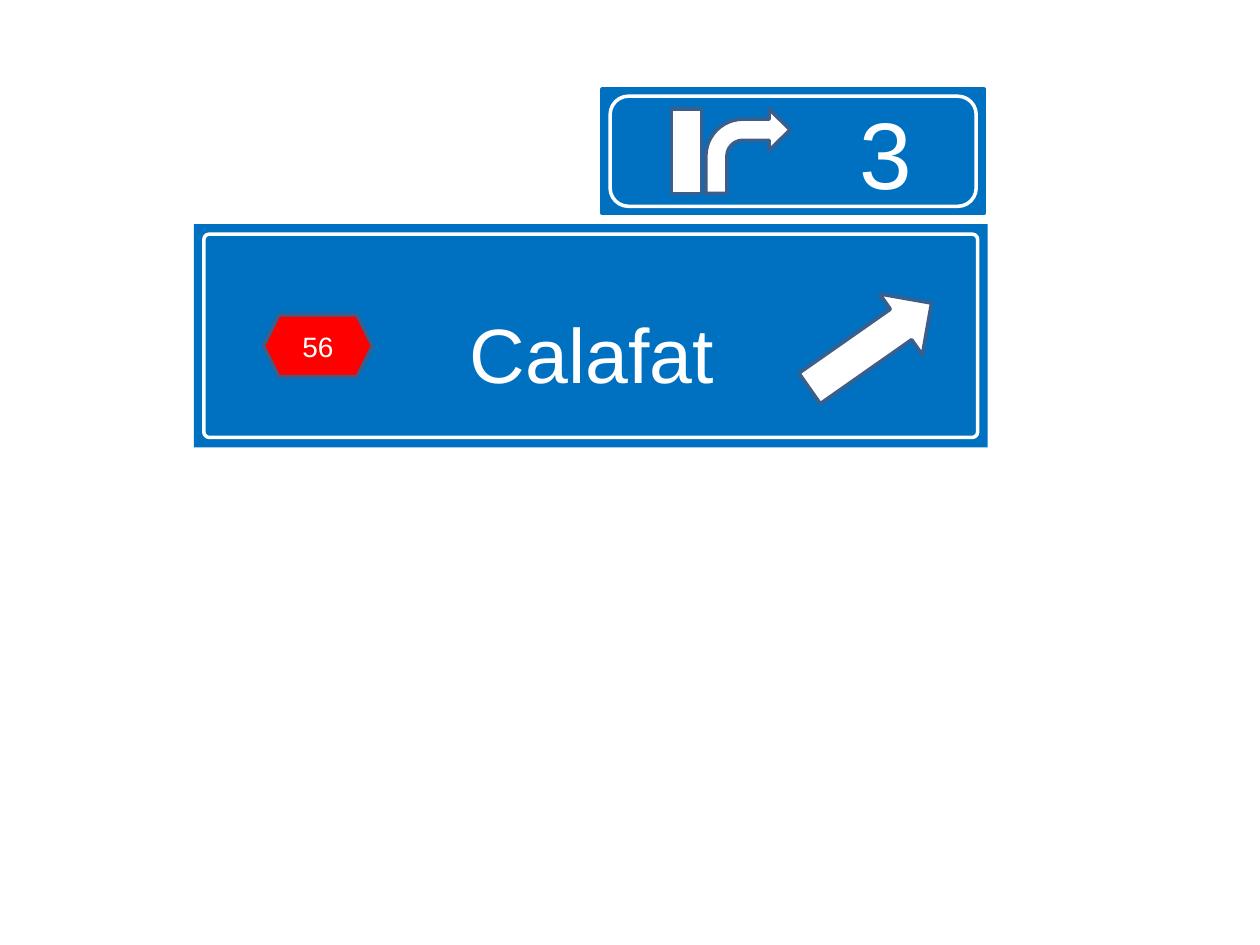
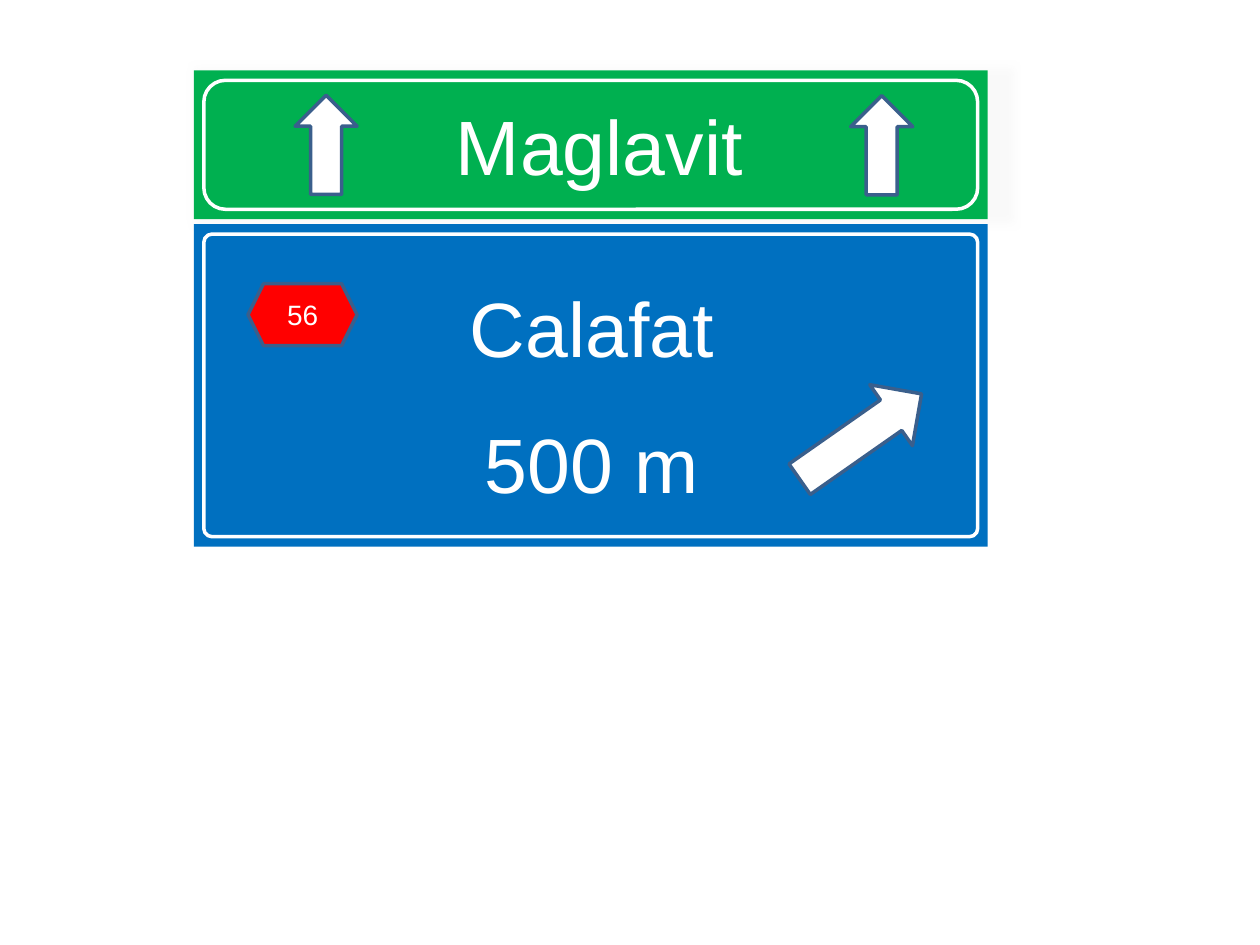
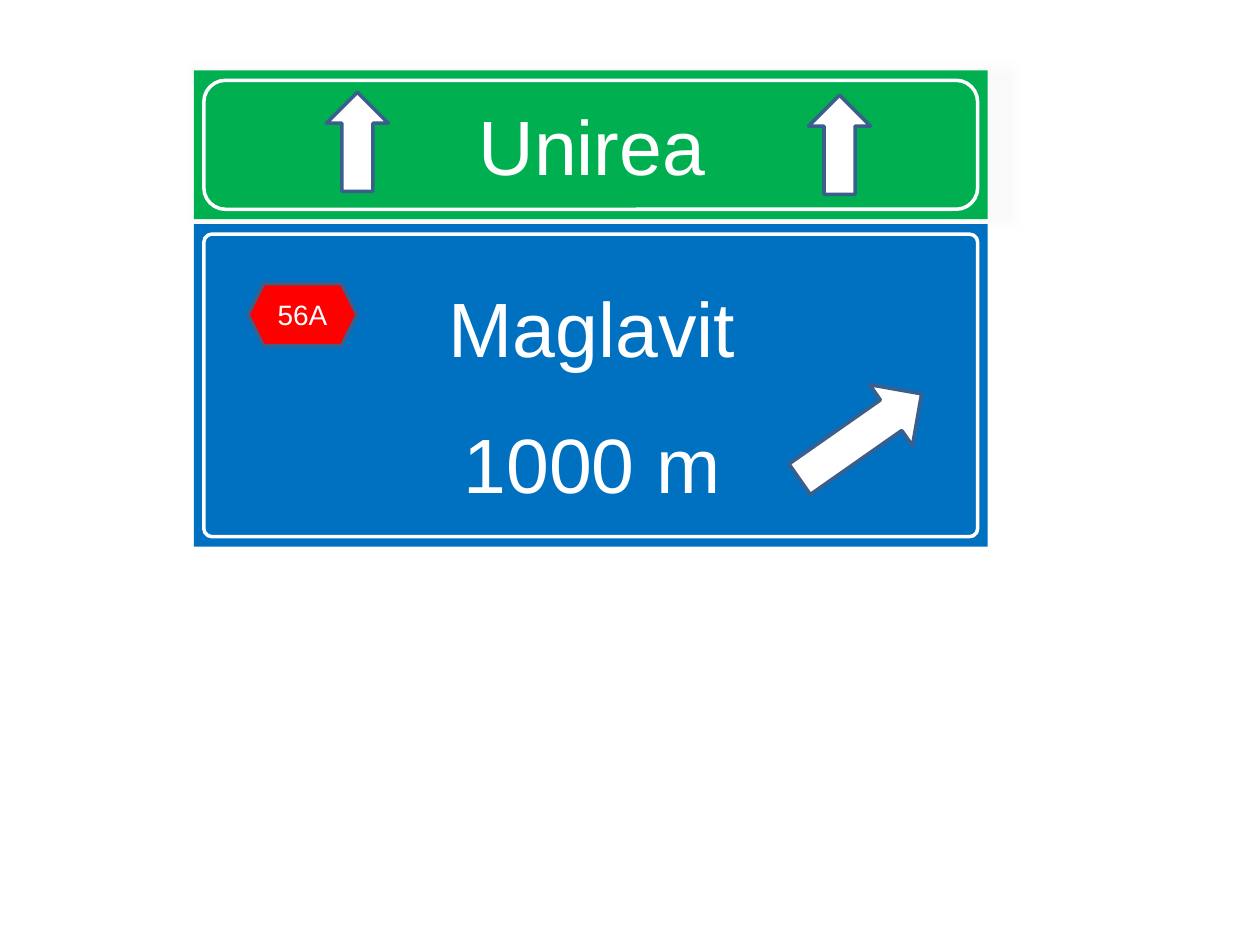
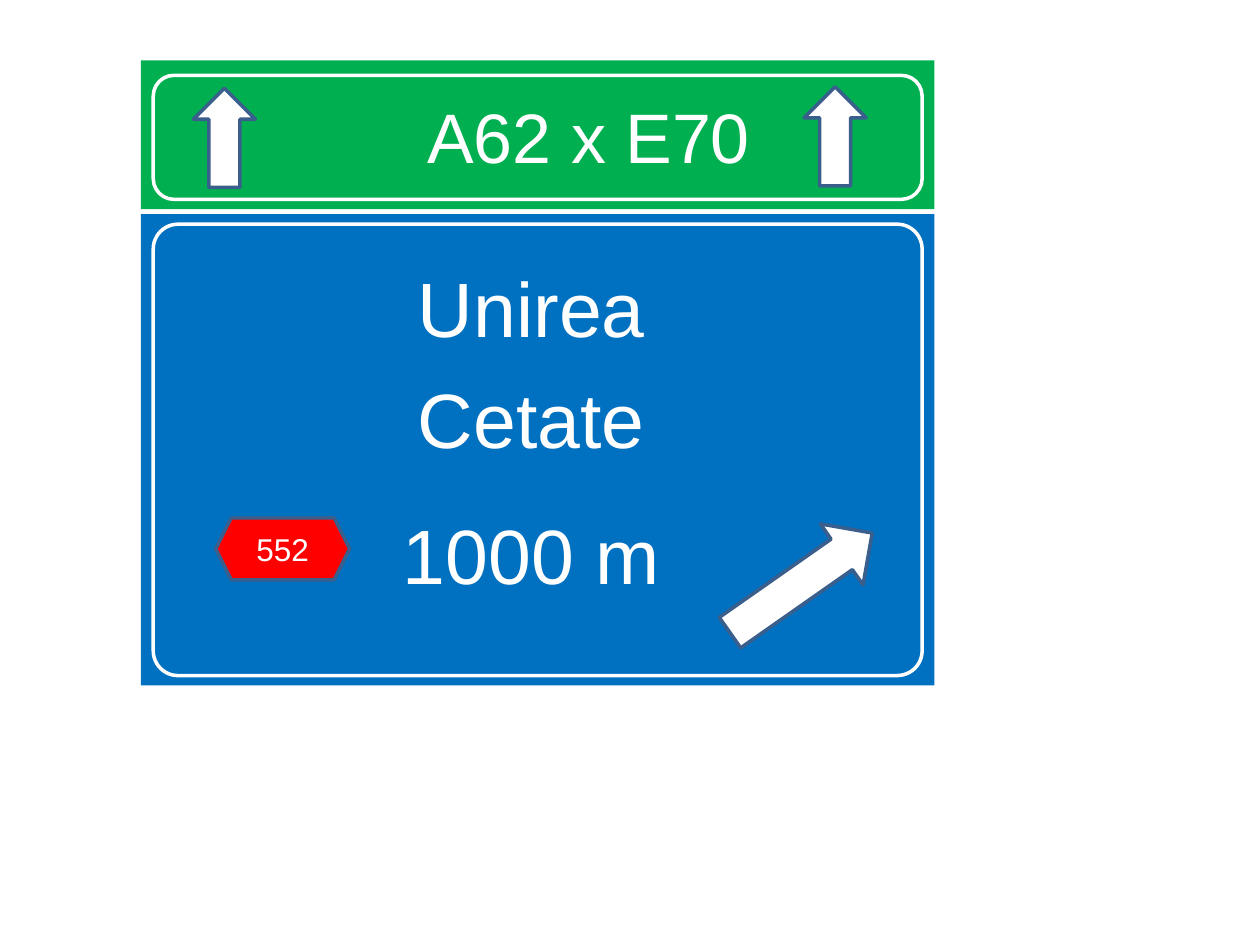
import dataclasses

import lxml.etree
import pptx
import pptx.dml.color
import pptx.enum.shapes
import pptx.enum.text
import pptx.oxml.ns
import pptx.util

Cm = pptx.util.Cm
Pt = pptx.util.Pt
KIND = pptx.enum.shapes.MSO_SHAPE
ANCHOR = pptx.enum.text.MSO_ANCHOR

COLOURS = {
    "white": "FFFFFF",
    "motorway": "00B050",
    "road": "0070C0",
    "badge": "FF0000",
    "edge": "3A5F8C",
    "shadow": "F2F2F2",
}
FONT = "Arial"
LINE_WIDTH = Pt(2)
RIGHT_INSET = 0.25
PANEL_WIDTH = 16
BAND_HEIGHT = 3
PANEL_GAP = 0.1
ARROW_TILT = 325


@dataclasses.dataclass(frozen=True)
class Area:
    """A place on the page, in centimetres."""
    left: float
    top: float
    width: float
    height: float


@dataclasses.dataclass(frozen=True)
class Line:
    """One line of sign text; before is the space above it in points."""
    text: str
    size: float = 44
    before: float = 0


@dataclasses.dataclass(frozen=True)
class Frame:
    """The white outline inside a panel, by its distance from the edges."""
    side: float = 0.2
    top: float = 0.2
    bottom: float = 0.2
    corner: float = 0.167


@dataclasses.dataclass(frozen=True)
class Panel:
    area: Area
    fill: str
    lines: tuple[Line, ...]
    left_inset: float
    top_inset: float = 0.13
    anchor: ANCHOR = ANCHOR.MIDDLE
    frame: Frame = Frame()
    shadow: bool = False
    plate: bool = False


@dataclasses.dataclass(frozen=True)
class Symbol:
    kind: KIND
    area: Area
    fill: str = "white"
    rotation: float = 0
    adjustments: tuple[float, ...] = ()
    lines: tuple[Line, ...] = ()


# Drawing
def colour(name: str) -> pptx.dml.color.RGBColor:
    return pptx.dml.color.RGBColor.from_string(COLOURS[name])


def draw_shape(page, kind: KIND, area: Area, fill: str | None, edge: str | None,
               adjustments: tuple[float, ...] = ()):
    shape = page.shapes.add_shape(
        kind, Cm(area.left), Cm(area.top), Cm(area.width), Cm(area.height))
    shape.shadow.inherit = False
    for index, value in enumerate(adjustments):
        shape.adjustments[index] = value
    if fill:
        shape.fill.solid()
        shape.fill.fore_color.rgb = colour(fill)
    else:
        shape.fill.background()
    if edge:
        shape.line.color.rgb = colour(edge)
        shape.line.width = LINE_WIDTH
    else:
        shape.line.fill.background()
    return shape


def write_lines(shape, lines: tuple[Line, ...], anchor: ANCHOR) -> None:
    box = shape.text_frame
    box.word_wrap = True
    box.vertical_anchor = anchor
    for index, line in enumerate(lines):
        para = box.add_paragraph() if index else box.paragraphs[0]
        para.alignment = pptx.enum.text.PP_ALIGN.CENTER
        para.space_before = Pt(line.before)
        span = para.add_run()
        span.text = line.text
        span.font.name = FONT
        span.font.size = Pt(line.size)
        span.font.color.rgb = colour("white")


def add_shadow(shape) -> None:
    """Cast a faint shadow, slightly larger than the shape, to its right."""
    name = pptx.oxml.ns.qn
    effects = shape._element.spPr.find(name("a:effectLst"))
    shadow = lxml.etree.SubElement(
        effects, name("a:outerShdw"), blurRad=str(Pt(5)), dist="0",
        sx="103000", sy="103000", algn="l", rotWithShape="0")
    tint = lxml.etree.SubElement(shadow, name("a:srgbClr"), val=COLOURS["shadow"])
    lxml.etree.SubElement(tint, name("a:alpha"), val="40000")


def draw_panel(page, panel: Panel) -> None:
    if panel.plate:
        shape = draw_shape(page, KIND.ROUNDED_RECTANGLE, panel.area,
                           panel.fill, panel.fill, (0,))
    else:
        shape = draw_shape(page, KIND.RECTANGLE, panel.area, panel.fill, None)
    if panel.shadow:
        add_shadow(shape)
    box = shape.text_frame
    box.margin_left, box.margin_right = Cm(panel.left_inset), Cm(RIGHT_INSET)
    box.margin_top = Cm(panel.top_inset)
    write_lines(shape, panel.lines, panel.anchor)

    area, frame = panel.area, panel.frame
    inner = Area(area.left + frame.side, area.top + frame.top,
                 area.width - 2 * frame.side,
                 area.height - frame.top - frame.bottom)
    draw_shape(page, KIND.ROUNDED_RECTANGLE, inner, None, "white", (frame.corner,))


def draw_symbol(page, symbol: Symbol) -> None:
    shape = draw_shape(page, symbol.kind, symbol.area, symbol.fill, "edge",
                       symbol.adjustments)
    shape.rotation = symbol.rotation
    if symbol.lines:
        write_lines(shape, symbol.lines, ANCHOR.MIDDLE)


# Sign parts
def motorway_band(left: float, top: float, text: str, left_inset: float,
                  size: float = 44, frame: Frame = Frame(),
                  shadow: bool = True) -> Panel:
    return Panel(Area(left, top, PANEL_WIDTH, BAND_HEIGHT), "motorway",
                 (Line(text, size),), left_inset, frame=frame, shadow=shadow)


def exit_panel(left: float, band_top: float, height: float,
               lines: tuple[Line, ...], top_inset: float,
               left_inset: float = 0.3,
               frame: Frame = Frame(corner=0.027)) -> Panel:
    top = band_top + BAND_HEIGHT + PANEL_GAP
    return Panel(Area(left, top, PANEL_WIDTH, height), "road", lines,
                 left_inset, top_inset, ANCHOR.TOP, frame)


def exit_arrow(left: float, top: float, length: float = 3) -> Symbol:
    return Symbol(KIND.RIGHT_ARROW, Area(left, top, length, 1.5), rotation=ARROW_TILT)


def ahead_arrow(left: float, top: float) -> Symbol:
    return Symbol(KIND.UP_ARROW, Area(left, top, 1.25, 2))


def road_badge(left: float, top: float, number: str, width: float = 2.2,
               size: float = 16) -> Symbol:
    return Symbol(KIND.HEXAGON, Area(left, top, width, 1.25), "badge",
                  lines=(Line(number, size),))


# The four signs
LEFT, TOP = 3.91, 1.42
WIDE_LEFT, WIDE_TOP = 2.84, 1.22


def distance_sign(ahead: str, ahead_inset: float, place: str, distance: str,
                  number: str, arrows: tuple[Symbol, ...]) -> list[Panel | Symbol]:
    return [
        motorway_band(LEFT, TOP, ahead, ahead_inset),
        exit_panel(LEFT, TOP, 6.5, (Line(place), Line(distance, before=25)), 1.14),
        exit_arrow(15.85, 8.05),
        *arrows,
        road_badge(5, 5.72, number),
    ]


SIGNS: list[list[Panel | Symbol]] = [
    [
        exit_panel(LEFT, TOP, 4.5, (Line("Calafat"),), 1.65),
        exit_arrow(16.05, 6.22),
        road_badge(5.31, 6.35, "56"),
        Panel(Area(12.14, 1.8, 7.7, 2.5), "road", (Line("3", 54),), 4,
              frame=Frame(0.16, 0.14, 0.14), plate=True),
        Symbol(KIND.RECTANGLE, Area(13.54, 2.2, 0.6, 1.7)),
        Symbol(KIND.BENT_ARROW, Area(14.23, 2.2, 1.7, 1.7),
               adjustments=(0.25, 0.245, 0.25, 0.438)),
    ],
    distance_sign("Maglavit", 0.6, "Calafat", "500 m", "56",
                  (ahead_arrow(5.95, 1.92), ahead_arrow(17.15, 1.93))),
    distance_sign("Unirea", 0.3, "Maglavit", "1000 m", "56A",
                  (ahead_arrow(6.58, 1.86), ahead_arrow(16.3, 1.92))),
    [
        exit_panel(WIDE_LEFT, WIDE_TOP, 9.5,
                   (Line("Unirea"), Line("Cetate", before=10.5),
                    Line("1000 m", before=25)),
                   0.94, 0, Frame(side=0.25, corner=0.055)),
        exit_arrow(14.4, 11, 3.5),
        motorway_band(WIDE_LEFT, WIDE_TOP, "A62 x E70", 2.3, 40,
                      Frame(side=0.25, top=0.3), shadow=False),
        ahead_arrow(3.9, 1.78),
        ahead_arrow(16.21, 1.75),
        road_badge(4.35, 10.44, "552", 2.7, 18),
    ],
]


def main() -> None:
    deck = pptx.Presentation()
    deck.slide_width, deck.slide_height = Cm(25.4), Cm(19.05)
    for sign in SIGNS:
        page = deck.slides.add_slide(deck.slide_layouts[6])
        for part in sign:
            if isinstance(part, Panel):
                draw_panel(page, part)
            else:
                draw_symbol(page, part)
    deck.save("out.pptx")


if __name__ == "__main__":
    main()
